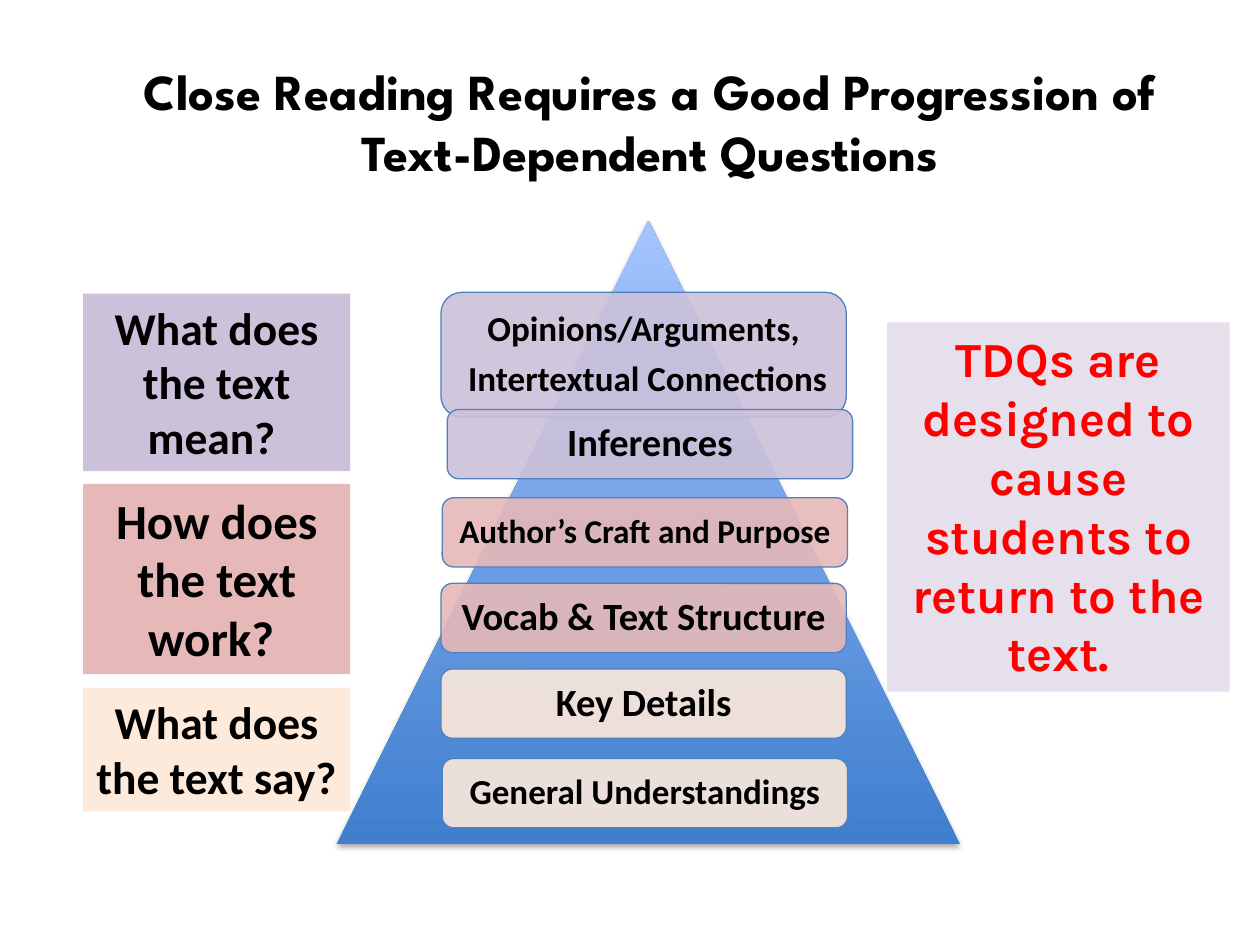
from collections import namedtuple

from lxml.etree import SubElement
from pptx import Presentation
from pptx.dml.color import RGBColor
from pptx.enum.shapes import MSO_SHAPE as Shape
from pptx.enum.text import MSO_ANCHOR as Anchor, PP_ALIGN as Align
from pptx.oxml.ns import qn
from pptx.util import Inches, Pt

Box = namedtuple("Box", "left top width height")
COLUMNS, ROWS = 100, 75
WIDTH, HEIGHT = Inches(10), Inches(7.5)
COLORS = {
    "black": "000000", "red": "FF0000", "outline": "4F81BD",
    "mean": "CCC1DA", "work": "E6B9B8", "say": "FDEADA", "note": "E6E0EC",
    "base": "3F7FCE", "peak": "A4C4FF",
}
QUESTIONS = [
    ("What does the text mean? ", "mean", 26, 0, 14.1),
    ("How does the text work? ", "work", 28, 15.1, 15.1),
    ("What does the text say?", "say", 26, 31.3, 9.8),
]
LEVELS = [
    (["Opinions/Arguments,", " Intertextual Connections"], "mean", 20, 8.3, 5.7, 9.9),
    (["Inferences"], "mean", 22, 8.8, 15, 5.5),
    (["Author’s Craft and Purpose"], "work", 19, 8.4, 22, 5.5),
    (["Vocab & Text Structure"], "work", 22, 8.3, 28.8, 5.5),
    (["Key Details"], "say", 22, 8.3, 35.6, 5.5),
    (["General Understandings"], "say", 20, 8.4, 42.7, 5.5),
]


def rgb(name):
    """Return the named colour."""
    return RGBColor.from_string(COLORS[name])


def place(box):
    """Turn a box in grid columns and rows into slide lengths."""
    across, down = WIDTH / COLUMNS, HEIGHT / ROWS
    return (round(box.left * across), round(box.top * down),
            round(box.width * across), round(box.height * down))


def write(shape, lines, size, font="Calibri", color="black", anchor=Anchor.MIDDLE,
          inset=None, line_spacing=None, space_after=0):
    """Write bold centred paragraphs into a shape."""
    frame = shape.text_frame
    frame.word_wrap = True
    frame.vertical_anchor = anchor
    if inset is not None:
        frame.margin_left = frame.margin_right = Inches(inset)
        frame.margin_top = frame.margin_bottom = Inches(inset)
    for index, line in enumerate(lines):
        paragraph = frame.add_paragraph() if index else frame.paragraphs[0]
        paragraph.alignment = Align.CENTER
        paragraph.line_spacing = line_spacing
        paragraph.space_after = Pt(space_after)
        run = paragraph.add_run()
        run.text = line
        run.font.name, run.font.size, run.font.bold = font, Pt(size), True
        run.font.color.rgb = rgb(color)


def add_panel(shapes, kind, box, fill, outline=None, opacity=100):
    """Add a flat filled shape with an optional outline and opacity."""
    panel = shapes.add_shape(kind, *place(box))
    panel.shadow.inherit = False
    panel.fill.solid()
    panel.fill.fore_color.rgb = rgb(fill)
    if opacity < 100:
        color = panel.fill._xPr.find(".//" + qn("a:srgbClr"))
        SubElement(color, qn("a:alpha"), val=str(opacity * 1000))
    if outline:
        panel.line.color.rgb = rgb(outline)
        panel.line.width = Pt(0.75)
    else:
        panel.line.fill.background()
    return panel


def add_title(slide, box):
    """Add the heading."""
    title = slide.shapes.add_textbox(*place(box))
    write(title, ["Close Reading Requires a Good Progression of Text-Dependent Questions"],
          28.8, font="League Spartan")


def add_triangle(shapes, box):
    """Add the shaded triangle with its soft shadow."""
    triangle = shapes.add_shape(Shape.ISOSCELES_TRIANGLE, *place(box))
    triangle.line.fill.background()
    triangle.fill.gradient()
    triangle.fill.gradient_angle = 90
    for stop, position, color in zip(triangle.fill.gradient_stops, (0, 1), ("base", "peak")):
        stop.position = position
        stop.color.rgb = rgb(color)
    triangle.shadow.inherit = False
    effects = triangle._element.spPr.find(qn("a:effectLst"))
    shadow = SubElement(effects, qn("a:outerShdw"), blurRad=str(Pt(3.1)),
                        dist=str(Pt(1.8)), dir="5400000", rotWithShape="0")
    color = SubElement(shadow, qn("a:srgbClr"), val=COLORS["black"])
    SubElement(color, qn("a:alpha"), val="35000")


def add_pyramid(slide, box):
    """Add the triangle and its levels as one group."""
    shapes = slide.shapes.add_group_shape().shapes
    add_triangle(shapes, box)
    for lines, fill, size, left, top, height in LEVELS:
        level = add_panel(shapes, Shape.ROUNDED_RECTANGLE,
                          Box(box.left + left, box.top + top, box.width * 0.65, height),
                          fill, outline="outline", opacity=90)
        write(level, lines, size, inset=0.08, line_spacing=0.9, space_after=size * 0.35)


def add_questions(slide, box):
    """Add the column of guiding questions."""
    for text, fill, size, top, height in QUESTIONS:
        panel = add_panel(slide.shapes, Shape.RECTANGLE,
                          Box(box.left, box.top + top, box.width, height), fill)
        write(panel, [text], size, anchor=Anchor.TOP)


def add_note(slide, box):
    """Add the side note."""
    note = add_panel(slide.shapes, Shape.RECTANGLE, box, "note")
    write(note, ["TDQs are designed to cause students to return to the text."], 28,
          font="Karla", color="red", anchor=Anchor.TOP)


def main():
    """Build and save the slide."""
    presentation = Presentation()
    presentation.slide_width, presentation.slide_height = WIDTH, HEIGHT
    slide = presentation.slides.add_slide(presentation.slide_layouts[6])
    add_title(slide, Box(6.6, 4.4, 90, 10.4))
    add_pyramid(slide, Box(26.7, 17.5, 49.5, 49.5))
    add_questions(slide, Box(6.6, 23.3, 21.2, 41.1))
    add_note(slide, Box(70.4, 25.6, 27.2, 29.3))
    presentation.save("out.pptx")


if __name__ == "__main__":
    main()
